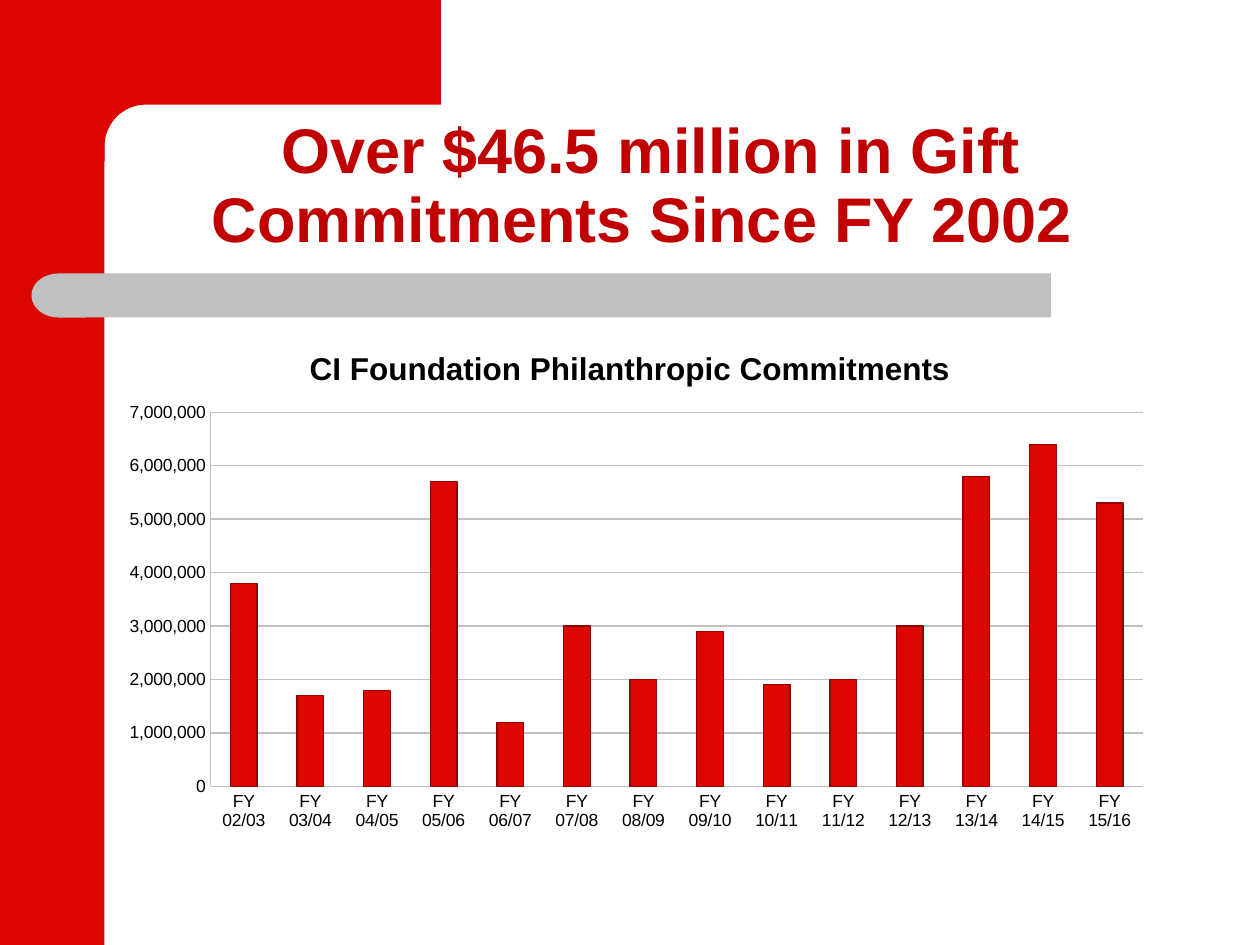
"""Build the gift commitments slide."""
import math
import pptx
import pptx.chart.data
import pptx.dml.color
import pptx.enum.chart
import pptx.enum.shapes
import pptx.enum.text
import pptx.oxml
import pptx.util
from pptx.util import Inches, Pt

THEME = {
    "font": "Arial", "red": "DC0702", "edge": "930400", "gray": "C0C0C0",
    "head": "C00000", "ink": "000000", "big": 36, "mid": 18, "small": 10,
}
HEAD = "Over $46.5 million in Gift Commitments Since FY 2002 "
TITLE = "CI Foundation Philanthropic Commitments "
START = 2
GIFTS = [3800000, 1700000, 1800000, 5700000, 1200000, 3000000, 2000000,
         2900000, 1900000, 2000000, 3000000, 5800000, 6400000, 5300000]
KIND = pptx.enum.shapes.MSO_SHAPE
BARS = [
    (KIND.RECTANGLE, (0, 0, 0.83, 7.5), "red", 0),
    (KIND.RECTANGLE, (0.67, 2.17, 7.67, 0.35), "gray", 0),
    (KIND.FLOWCHART_DELAY, (0.25, 2.17, 0.43, 0.35), "gray", 180),
]
CORNER = (0.83, 0.83, 0.33, 0.33)
PLOT = {"x": 0.1, "y": 0.17, "w": 0.88, "h": 0.73}


def color(name):
    return pptx.dml.color.RGBColor.from_string(THEME[name])


def paint(shape, name):
    shape.shadow.inherit = False
    shape.fill.solid()
    shape.fill.fore_color.rgb = color(name)
    shape.line.fill.background()


def style(font, size, name, bold=False):
    font.name, font.size, font.bold = THEME["font"], Pt(THEME[size]), bold
    font.color.rgb = color(name)


def add_bar(slide, kind, box, name, turn):
    shape = slide.shapes.add_shape(kind, *map(Inches, box))
    shape.rotation = turn
    paint(shape, name)


def add_corner(slide):
    left, top, wide, high = CORNER
    arc = []
    for step in range(13):
        turn = math.pi / 2 * step / 12
        arc.append((left + wide * (1 - math.sin(turn)),
                    top + high * (1 - math.cos(turn))))
    points = [(3.5, 0), (3.5, top), *arc, (left, 1.28), (0.5, 1.28), (0.5, 0)]
    points = [(Inches(x), Inches(y)) for x, y in points]
    form = slide.shapes.build_freeform(*points[0])
    form.add_line_segments(points[1:], close=True)
    paint(form.convert_to_shape(), "red")


def add_head(slide):
    area = map(Inches, (0.83, 0.83, 8.67, 1.25))
    box = slide.shapes.add_shape(KIND.ROUNDED_RECTANGLE, *area)
    box.adjustments[0] = 0.22
    box.shadow.inherit = False
    box.fill.background()
    box.line.fill.background()
    frame = box.text_frame
    frame.word_wrap = True
    frame.margin_bottom = Inches(-0.03)
    frame.vertical_anchor = pptx.enum.text.MSO_ANCHOR.BOTTOM
    para = frame.paragraphs[0]
    para.alignment = pptx.enum.text.PP_ALIGN.CENTER
    para.line_spacing = 0.9
    run = para.add_run()
    run.text = HEAD
    style(run.font, "big", "head", True)


def add_chart(slide):
    data = pptx.chart.data.CategoryChartData(number_format="#,##0")
    data.categories = [f"FY {year:02}/{year + 1:02}"
                       for year in range(START, START + len(GIFTS))]
    data.add_series("Series 1", GIFTS)
    area = map(Inches, (0.83, 2.58, 8.41, 4.07))
    kind = pptx.enum.chart.XL_CHART_TYPE.COLUMN_CLUSTERED
    chart = slide.shapes.add_chart(kind, *area, data).chart
    style(chart.font, "small", "ink")
    chart.has_legend = False
    chart.has_title = True
    run = chart.chart_title.text_frame.paragraphs[0].add_run()
    run.text = TITLE
    style(run.font, "mid", "ink", True)
    chart.chart_title.include_in_layout = False

    plot = chart.plots[0]
    plot.gap_width = 150
    plot.vary_by_categories = False
    look = plot.series[0].format
    look.fill.solid()
    look.fill.fore_color.rgb = color("red")
    look.line.color.rgb = color("edge")
    look.line.width = Pt(0.75)

    value = chart.value_axis
    value.minimum_scale, value.maximum_scale = 0, 7000000
    value.major_unit = 1000000
    value.has_major_gridlines = True
    value.tick_labels.number_format = "#,##0"
    value.tick_labels.number_format_is_linked = False
    for axis in (chart.category_axis, value):
        axis.major_tick_mark = pptx.enum.chart.XL_TICK_MARK.NONE
        style(axis.tick_labels.font, "small", "ink")
    for item in (chart.category_axis, value, value.major_gridlines):
        item.format.line.color.rgb = color("gray")
        item.format.line.width = Pt(0.75)
    set_plot(chart)


def set_plot(chart):
    space = "http://schemas.openxmlformats.org/drawingml/2006/chart"
    parts = '<c:layoutTarget val="inner"/><c:xMode val="edge"/><c:yMode val="edge"/>'
    parts += "".join(f'<c:{key} val="{size}"/>' for key, size in PLOT.items())
    layout = pptx.oxml.parse_xml(
        f'<c:layout xmlns:c="{space}"><c:manualLayout>{parts}'
        "</c:manualLayout></c:layout>")
    area = chart.plots[0]._element.getparent()
    for old in area.findall(f"{{{space}}}layout"):
        area.remove(old)
    area.insert(0, layout)


def main():
    deck = pptx.Presentation()
    deck.slide_width, deck.slide_height = Inches(10), Inches(7.5)
    slide = deck.slides.add_slide(deck.slide_layouts[6])
    add_corner(slide)
    for bar in BARS:
        add_bar(slide, *bar)
    add_head(slide)
    add_chart(slide)
    deck.save("out.pptx")


if __name__ == "__main__":
    main()
